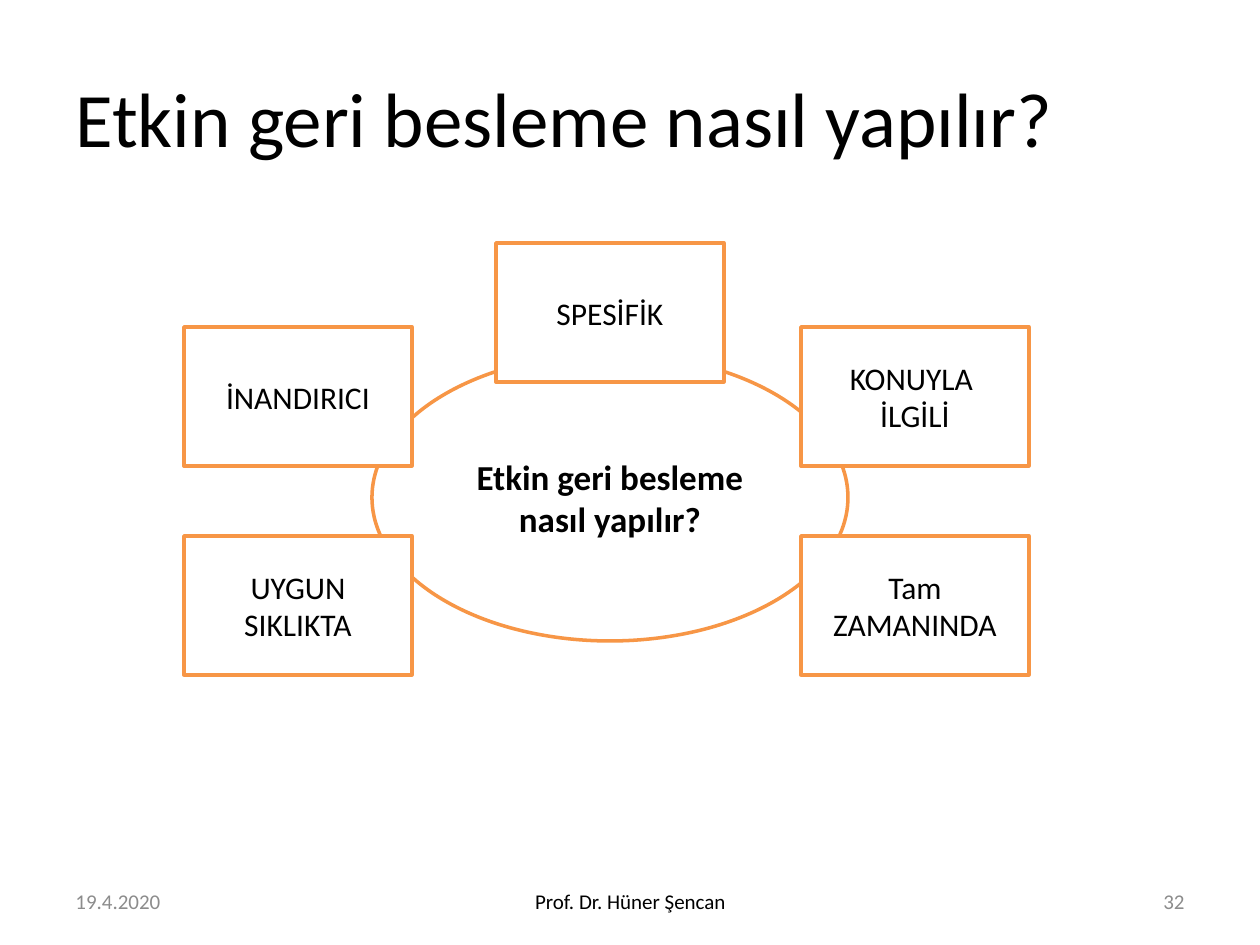
from pptx import Presentation
from pptx.dml.color import RGBColor
from pptx.enum.shapes import MSO_SHAPE
from pptx.enum.text import MSO_ANCHOR, PP_ALIGN
from pptx.util import Emu, Pt

PX_PER_INCH = 126
EMU_PER_PX = 914400 / PX_PER_INCH

BLACK = RGBColor(0x00, 0x00, 0x00)
GRAY = RGBColor(0x8C, 0x8C, 0x8C)
WHITE = RGBColor(0xFF, 0xFF, 0xFF)
ORANGE = RGBColor(0xF7, 0x96, 0x46)

QUESTION = "Etkin geri besleme nasıl yapılır?"
BOX_WIDTH, BOX_HEIGHT = 228, 139
LEFT_COLUMN, MIDDLE_COLUMN, RIGHT_COLUMN = 184, 496, 801
TOP_ROW, UPPER_ROW, LOWER_ROW = 243, 327, 536
FOOTER_TOP, FOOTER_HEIGHT = 876, 50


def px(length):
    return Emu(round(length * EMU_PER_PX))


class SlideBuilder:
    """Holds the slide and the style shared by its elements."""

    font_name = "Calibri"
    line_width = Pt(2)

    def __init__(self, slide):
        self.slide = slide

    def set_text(self, shape, text, size, color, align, bold=False):
        text_frame = shape.text_frame
        text_frame.word_wrap = True
        text_frame.vertical_anchor = MSO_ANCHOR.MIDDLE
        text_frame.text = text
        for paragraph in text_frame.paragraphs:
            paragraph.alignment = align
            for run in paragraph.runs:
                run.font.name = self.font_name
                run.font.size = Pt(size)
                run.font.bold = bold
                run.font.color.rgb = color

    def text_box(self, bounds, text, size, color=BLACK, align=PP_ALIGN.LEFT):
        shape = self.slide.shapes.add_textbox(*map(px, bounds))
        self.set_text(shape, text, size, color, align)

    def outlined_shape(self, kind, bounds, text, size, bold=False):
        shape = self.slide.shapes.add_shape(kind, *map(px, bounds))
        shape.shadow.inherit = False
        shape.fill.solid()
        shape.fill.fore_color.rgb = WHITE
        shape.line.color.rgb = ORANGE
        shape.line.width = self.line_width
        self.set_text(shape, text, size, BLACK, PP_ALIGN.CENTER, bold)


def main():
    presentation = Presentation()
    presentation.slide_width = px(1260)
    presentation.slide_height = px(945)
    blank_layout = presentation.slide_layouts[6]
    builder = SlideBuilder(presentation.slides.add_slide(blank_layout))

    builder.text_box((63, 38, 1134, 158), QUESTION, 44)

    footers = [
        (63, 294, "19.4.2020", GRAY, PP_ALIGN.LEFT),
        (431, 399, "Prof. Dr. Hüner Şencan", BLACK, PP_ALIGN.CENTER),
        (903, 294, "32", GRAY, PP_ALIGN.RIGHT),
    ]
    for left, width, text, color, align in footers:
        bounds = (left, FOOTER_TOP, width, FOOTER_HEIGHT)
        builder.text_box(bounds, text, 12, color, align)

    builder.outlined_shape(MSO_SHAPE.OVAL, (372, 354, 476, 287), QUESTION, 20, bold=True)

    # A vertical tab is a line break within the paragraph.
    qualities = [
        (MIDDLE_COLUMN, TOP_ROW, "SPESİFİK"),
        (LEFT_COLUMN, UPPER_ROW, "İNANDIRICI"),
        (LEFT_COLUMN, LOWER_ROW, "UYGUN SIKLIKTA"),
        (RIGHT_COLUMN, UPPER_ROW, "KONUYLA \vİLGİLİ"),
        (RIGHT_COLUMN, LOWER_ROW, "Tam\vZAMANINDA"),
    ]
    for left, top, text in qualities:
        bounds = (left, top, BOX_WIDTH, BOX_HEIGHT)
        builder.outlined_shape(MSO_SHAPE.RECTANGLE, bounds, text, 18)

    presentation.save("out.pptx")


if __name__ == "__main__":
    main()
